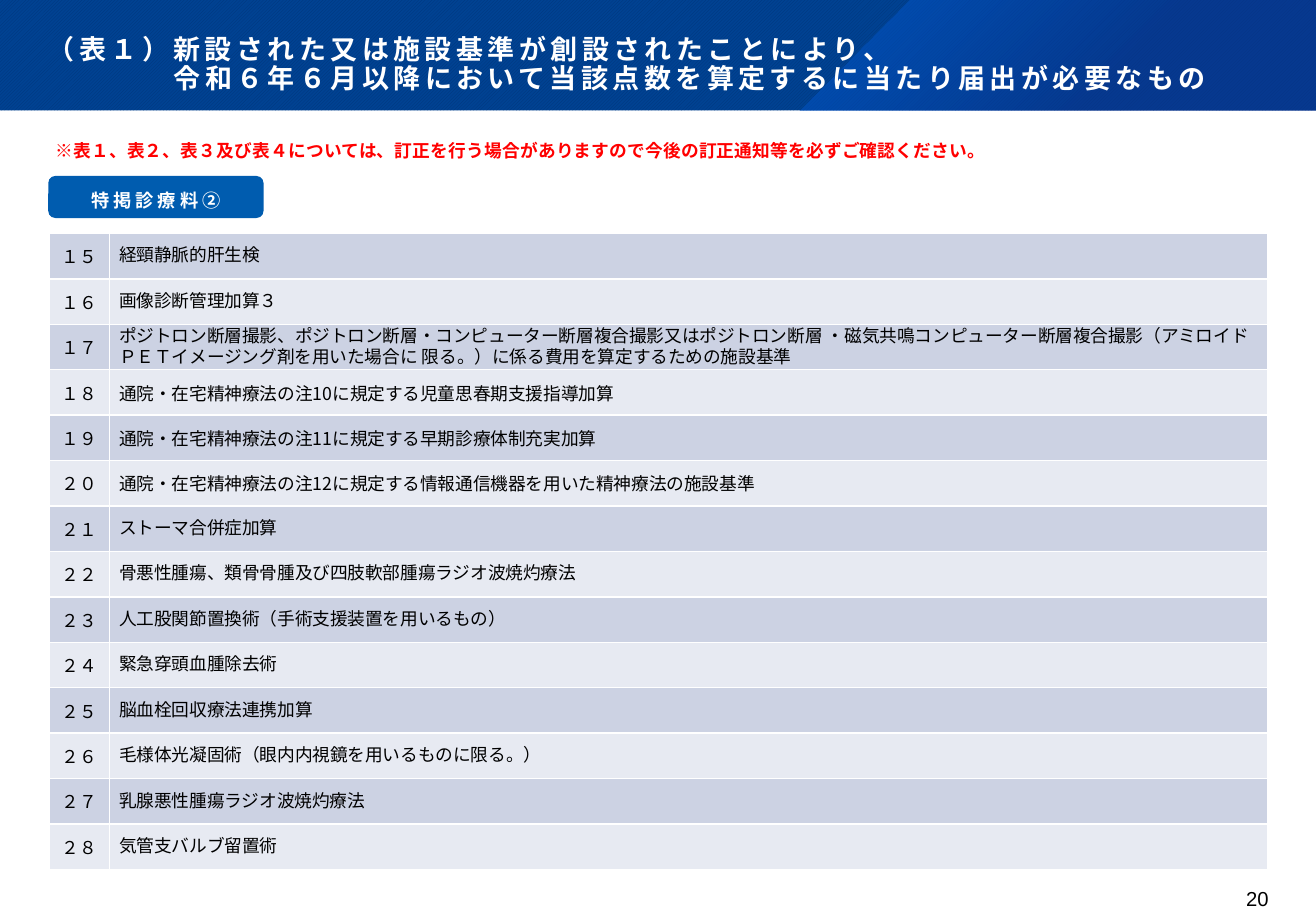
from lxml import etree
from pptx import Presentation, util as u
from pptx.dml.color import RGBColor
from pptx.enum import dml, shapes, text
from pptx.oxml import parse_xml
from pptx.oxml.ns import nsdecls, qn

KARLA, NOTO = "Karla", "Noto Sans CJK JP"
CENTER = text.PP_ALIGN.CENTER
MIDDLE = text.MSO_ANCHOR.MIDDLE
STRIPES = ("CCD2E3", "E7EAF2")
FIRST_NUMBER = 15
ITEMS = [
    ["経頸静脈的肝生検"],
    ["画像診断管理加算３"],
    ["ポジトロン断層撮影、ポジトロン断層・コンピューター断層複合撮影又はポジトロン断層 ・磁気共鳴"
     "コンピューター断層複合撮影（アミロイドＰＥＴイメージング剤を用いた場合に 限る。）に係る費用を算定するための施設基準"],
    ["通院・在宅精神療法の注", "10", "に規定する児童思春期支援指導加算"],
    ["通院・在宅精神療法の注", "11", "に規定する早期診療体制充実加算"],
    ["通院・在宅精神療法の注", "12", "に規定する情報通信機器を用いた精神療法の施設基準"],
    ["ストーマ合併症加算"],
    ["骨悪性腫瘍、類骨骨腫及び四肢軟部腫瘍ラジオ波焼灼療法"],
    ["人工股関節置換術（手術支援装置を用いるもの）"],
    ["緊急穿頭血腫除去術"],
    ["脳血栓回収療法連携加算"],
    ["毛様体光凝固術（眼内内視鏡を用いるものに限る。）"],
    ["乳腺悪性腫瘍ラジオ波焼灼療法"],
    ["気管支バルブ留置術"],
]


def rgb(value):
    """Turn a hex string into a colour."""
    return RGBColor.from_string(value)


def add_run(p, content, size, font, color="000000", bold=False, spacing=0):
    """Add one run with its font, colour and letter spacing in points."""
    r = p.add_run()
    r.text = content
    r.font.size, r.font.name, r.font.bold = u.Pt(size), font, bold
    r.font.color.rgb = rgb(color)
    rPr = r._r.get_or_add_rPr()
    rPr.set("lang", "ja-JP")
    if spacing:
        rPr.set("spc", str(round(spacing * 100)))
    etree.SubElement(rPr, qn("a:ea")).set("typeface", font)


def set_frame(tf, margins, anchor=text.MSO_ANCHOR.TOP):
    """Set wrapping, margins in cm and anchor, and return the first paragraph."""
    tf.word_wrap = True
    tf.vertical_anchor = anchor
    tf.margin_left, tf.margin_top, tf.margin_right, tf.margin_bottom = map(u.Cm, margins)
    return tf.paragraphs[0]


def add_banner(s, x, y, w, h):
    """Draw the title band with its slanted glow and two-line title."""
    band = s.shapes.add_shape(shapes.MSO_SHAPE.RECTANGLE, u.Cm(x), u.Cm(y), u.Cm(w), u.Cm(h))
    band.shadow.inherit = False
    band.line.fill.background()
    band.fill.patterned()
    band.fill.pattern = dml.MSO_PATTERN.DARK_UPWARD_DIAGONAL
    band.fill.fore_color.rgb, band.fill.back_color.rgb = rgb("003579"), rgb("004292")

    builder = s.shapes.build_freeform(u.Cm(x + w - 8.48), u.Cm(y), scale=1)
    corners = [(x + w, y), (x + w, y + h), (x + w - 10.8, y + h)]
    builder.add_line_segments([(u.Cm(a), u.Cm(b)) for a, b in corners], close=True)
    glow = builder.convert_to_shape()
    glow.shadow.inherit = False
    glow.line.fill.background()
    stops = "".join(
        f'<a:gs pos="{pos}000"><a:srgbClr val="{color}"><a:alpha val="{alpha}000"/></a:srgbClr></a:gs>'
        for pos, color, alpha in ((0, "0064DF", 50), (62, "0C338E", 55)))
    grad = parse_xml(f'<a:gradFill {nsdecls("a")}><a:gsLst>{stops}</a:gsLst><a:path path="circle">'
                     '<a:fillToRect r="100000" b="100000"/></a:path></a:gradFill>')
    glow._element.spPr.find(qn("a:custGeom")).addnext(grad)

    title = s.shapes.add_textbox(u.Cm(x), u.Cm(y), u.Cm(w), u.Cm(h))
    p = set_frame(title.text_frame, (1, 0.91, 0.91, 0.36), text.MSO_ANCHOR.BOTTOM)
    p.line_spacing = 0.9
    pPr = p._p.get_or_add_pPr()
    pPr.set("marL", str(u.Cm(2.63)))
    pPr.set("indent", str(-u.Cm(2.63)))
    style = (16, KARLA, "FFFFFF", True, 2.7)
    add_run(p, "（表１）新設された又は施設基準が創設されたことにより、", *style)
    p.add_line_break()
    add_run(p, "令和６年６月以降において当該点数を算定するに当たり届出が必要なもの", *style)


def add_notice(s, x, y, w, h):
    """Write the red notice about corrections."""
    sp = s.shapes.add_textbox(u.Cm(x), u.Cm(y), u.Cm(w), u.Cm(h))
    p = set_frame(sp.text_frame, (0.15, 0.08, 0.15, 0.08))
    p.alignment, p.space_after = text.PP_ALIGN.JUSTIFY, u.Pt(4)
    add_run(p, "※表１、表２、表３及び表４については、訂正を行う場合がありますので"
               "今後の訂正通知等を必ずご確認ください。", 10.5, NOTO, "FF0000", True)


def add_badge(s, x, y, w, h):
    """Draw the rounded section label."""
    sp = s.shapes.add_shape(shapes.MSO_SHAPE.ROUNDED_RECTANGLE, u.Cm(x), u.Cm(y), u.Cm(w), u.Cm(h))
    sp.adjustments[0] = 0.17
    sp.shadow.inherit = False
    sp.fill.solid()
    sp.fill.fore_color.rgb = rgb("005CAF")
    sp.line.fill.background()
    p = set_frame(sp.text_frame, (0.25, 0.13, 0.25, 0.13), MIDDLE)
    p.alignment, p.line_spacing, p.space_after = CENTER, 1.3, u.Pt(8)
    add_run(p, "特掲診療料②", 10.8, NOTO, "FFFFFF", True, 2.4)


def style_cell(cell, color):
    """Fill a cell, give it white borders and return its paragraph."""
    cell.fill.solid()
    cell.fill.fore_color.rgb = rgb(color)
    tcPr = cell._tc.get_or_add_tcPr()
    for i, side in enumerate("LRTB"):
        tcPr.insert(i, parse_xml(
            f'<a:ln{side} {nsdecls("a")} w="12700"><a:solidFill><a:srgbClr val="FFFFFF"/>'
            f'</a:solidFill></a:ln{side}>'))
    cell.vertical_anchor = MIDDLE
    cell.margin_left = cell.margin_right = u.Cm(0.2)
    cell.margin_top = cell.margin_bottom = 0
    return cell.text_frame.paragraphs[0]


def add_item_table(s, x, y, w, h):
    """Build the striped table of numbered items."""
    tbl = s.shapes.add_table(len(ITEMS), 2, u.Cm(x), u.Cm(y), u.Cm(w), u.Cm(h)).table
    tbl.first_row = tbl.horz_banding = False
    tbl.columns[0].width, tbl.columns[1].width = u.Cm(1.26), u.Cm(w - 1.26)
    full_width = str.maketrans("0123456789", "０１２３４５６７８９")
    for i, parts in enumerate(ITEMS):
        tbl.rows[i].height = u.Cm(h / len(ITEMS))
        number, name = (style_cell(tbl.cell(i, c), STRIPES[i % 2]) for c in (0, 1))
        number.alignment = CENTER
        add_run(number, str(FIRST_NUMBER + i).translate(full_width), 10.5, NOTO)
        for part in parts:
            add_run(name, part, 10.5, NOTO if part.isdigit() else KARLA)


def add_page_number(s, x, y, w, h):
    """Write the page number at the right."""
    sp = s.shapes.add_textbox(u.Cm(x), u.Cm(y), u.Cm(w), u.Cm(h))
    p = set_frame(sp.text_frame, (0, 0, 0, 0))
    p.alignment = text.PP_ALIGN.RIGHT
    add_run(p, "20", 12, "Arial")


def main():
    """Build the slide and save it."""
    prs = Presentation()
    prs.slide_width, prs.slide_height = u.Cm(27.51), u.Cm(19.05)
    s = prs.slides.add_slide(prs.slide_layouts[6])
    add_banner(s, 0, 0, 27.51, 2.31)
    add_page_number(s, 24.77, 18.54, 1.75, 0.76)
    add_item_table(s, 1.03, 4.88, 25.48, 13.3)
    add_badge(s, 1.01, 3.68, 4.5, 0.88)
    add_notice(s, 1.01, 2.84, 19.4, 0.61)
    prs.save("out.pptx")


if __name__ == "__main__":
    main()
